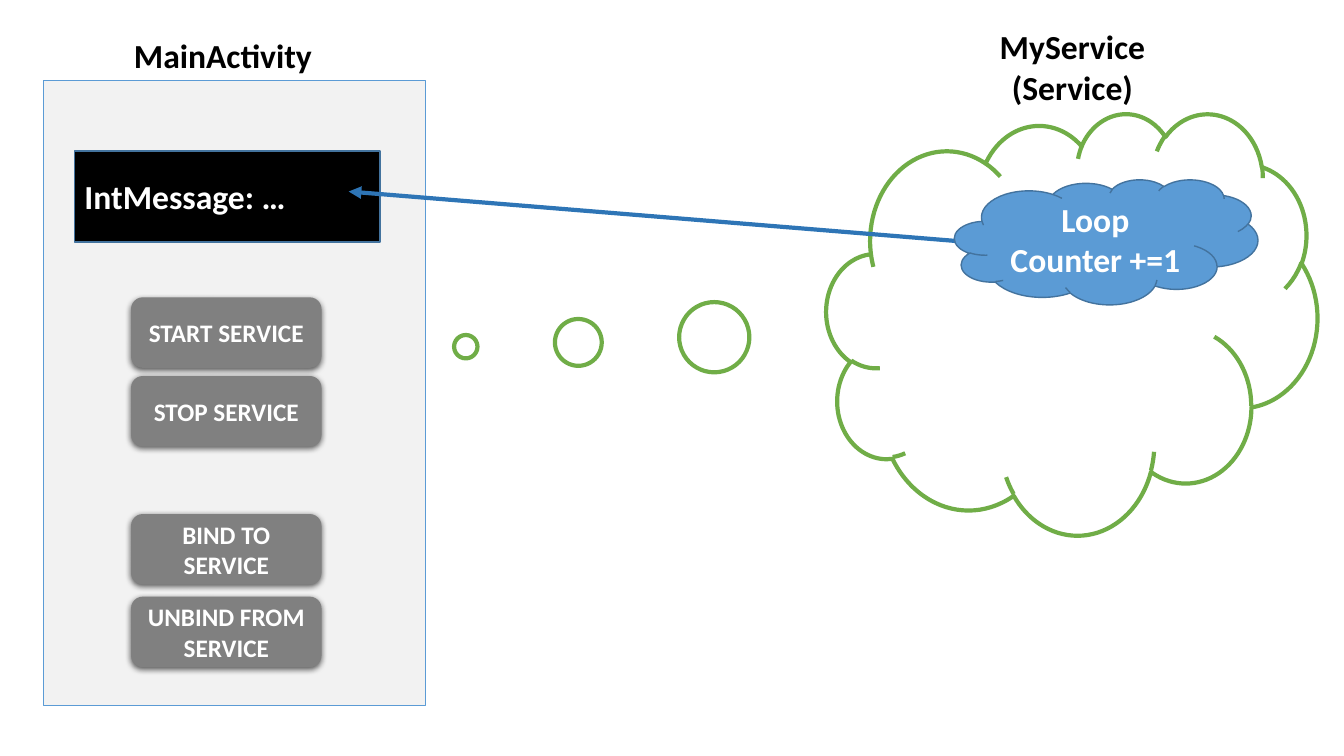
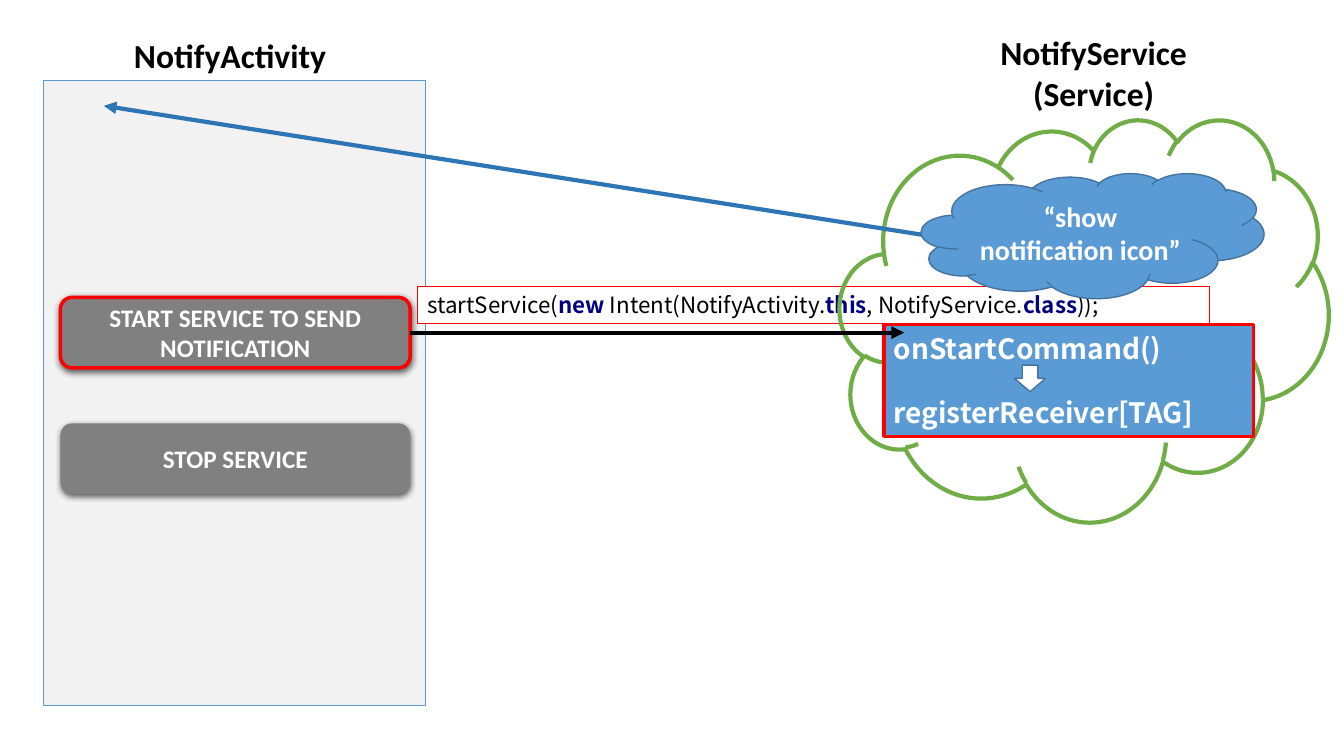
import pptx
import pptx.util
import pptx.dml.color
import pptx.enum.shapes
import pptx.enum.text
import pptx.oxml
import pptx.oxml.ns

Pt = pptx.util.Pt
RGBColor = pptx.dml.color.RGBColor
Kind = pptx.enum.shapes.MSO_SHAPE
Align = pptx.enum.text.PP_ALIGN
Anchor = pptx.enum.text.MSO_ANCHOR

WHITE = RGBColor(0xFF, 0xFF, 0xFF)
BLACK = RGBColor(0x00, 0x00, 0x00)
PALE = RGBColor(0xF2, 0xF2, 0xF2)
GRAY = RGBColor(0x80, 0x80, 0x80)
BLUE = RGBColor(0x5B, 0x9B, 0xD5)
EDGE = RGBColor(0x43, 0x73, 0x9E)
DEEP = RGBColor(0x2E, 0x75, 0xB6)
GREEN = RGBColor(0x70, 0xAD, 0x47)
RED = RGBColor(0xFF, 0x00, 0x00)
NAVY = RGBColor(0x00, 0x00, 0x80)
SANS = "Calibri"
CODE = "Noto Sans CJK SC"
PANEL = (31, 57.6, 272.8, 446.4)


def write(shape, paras, size=24, font=SANS, color=WHITE, bold=True,
          align=Align.CENTER, gap=0, wrap=True):
    """Fill a shape with paragraphs, each a string or a list of (text, color, bold)."""
    frame = shape.text_frame
    frame.word_wrap = wrap
    for i, runs in enumerate(paras):
        para = frame.paragraphs[0] if i == 0 else frame.add_paragraph()
        para.alignment = align
        para.space_before = Pt(gap if i else 0)
        for text, hue, heavy in [(runs, color, bold)] if isinstance(runs, str) else runs:
            run = para.add_run()
            run.text = text
            run.font.size, run.font.name = Pt(size), font
            run.font.bold, run.font.color.rgb = heavy, hue


def draw(slide, kind, box, fill=None, line=None, width=1):
    """Add a flat preset shape."""
    shape = slide.shapes.add_shape(kind, *map(Pt, box))
    shape.shadow.inherit = False
    shape.text_frame.vertical_anchor = Anchor.MIDDLE
    if fill is None:
        shape.fill.background()
    else:
        shape.fill.solid()
        shape.fill.fore_color.rgb = fill
    if line is None:
        shape.line.fill.background()
    else:
        shape.line.color.rgb, shape.line.width = line, Pt(width)
    return shape


def arrow(slide, start, end, color):
    """Add a straight arrow that points at its end."""
    link = slide.shapes.add_connector(
        pptx.enum.shapes.MSO_CONNECTOR.STRAIGHT, *map(Pt, start + end))
    link.line.color.rgb, link.line.width = color, Pt(3)
    tip = pptx.oxml.parse_xml(
        f'<a:tailEnd {pptx.oxml.ns.nsdecls("a")} type="triangle"/>')
    link.line._get_or_add_ln().append(tip)
    link._element.spPr.append(
        pptx.oxml.parse_xml(f'<a:effectLst {pptx.oxml.ns.nsdecls("a")}/>'))


def title(slide, box, lines, align=Align.CENTER):
    """Add a bold heading of one or more lines."""
    write(slide.shapes.add_textbox(*map(Pt, box)), lines, color=BLACK,
          align=align, wrap=False)


def button(slide, box, label, line=None):
    """Add a gray button with a soft shadow."""
    shape = draw(slide, Kind.ROUNDED_RECTANGLE, box, GRAY, line, 2.5)
    write(shape, [label], size=18)
    glow = pptx.oxml.parse_xml(
        f'<a:outerShdw {pptx.oxml.ns.nsdecls("a")} blurRad="{Pt(4.5)}" dist="{Pt(1.5)}" '
        'dir="5400000" algn="ctr" rotWithShape="0"><a:srgbClr val="000000">'
        '<a:alpha val="63000"/></a:srgbClr></a:outerShdw>')
    shape._element.spPr.find(pptx.oxml.ns.qn("a:effectLst")).append(glow)


def screen(slide, box, name, span, inset, wide, labels):
    """Draw an activity panel, its heading and its buttons at (offset, label, line)."""
    x, y, w, h = box
    draw(slide, Kind.RECTANGLE, box, PALE, BLUE, 0.5)
    title(slide, (x + 57.6, y - 36.3, span, 36), [name], Align.LEFT)
    for drop, label, line in labels:
        button(slide, (x + inset, y + drop, wide, 50.4), label, line)


def service(slide, box, name, left, span, kind, fill=None):
    """Draw a green service cloud with its heading on top."""
    x, y, w, h = box
    title(slide, (x + left, y - 65.5, span, 65.5), [name, "(Service)"])
    return draw(slide, kind, box, fill, GREEN, 3)


def cloud(slide, box, text, size):
    """Draw a blue cloud of work."""
    write(draw(slide, Kind.CLOUD, box, BLUE, EDGE), [text], size=size)


def steps(slide, box):
    """Draw the two calls inside the service, with a block arrow in the gap between."""
    x, y, w, h = box
    shape = draw(slide, Kind.RECTANGLE, box, BLUE, RED, 2.5)
    shape.text_frame.margin_top = shape.text_frame.margin_bottom = 0
    write(shape, ["onStartCommand()", "registerReceiver[TAG]"], size=20,
          font=CODE, align=Align.LEFT, gap=22)
    draw(slide, Kind.DOWN_ARROW, (x + 93.2, y + 29, 22.3, 19), WHITE, EDGE)


def bind(slide):
    """Build the slide on a bound service that counts."""
    x, y, w, h = PANEL
    screen(slide, PANEL, "MainActivity", 148.3, 62.6, 136.1, [
        (154.8, "START SERVICE", None), (211, "STOP SERVICE", None),
        (309.6, "BIND TO SERVICE", None), (368.6, "UNBIND FROM SERVICE", None)])
    bubble = service(slide, (590.4, 80.6, 350.6, 301), "MyService",
                     115.9, 119.5, Kind.CLOUD_CALLOUT, WHITE)
    bubble.adjustments[0], bubble.adjustments[1] = -1.235, 0.055
    note = draw(slide, Kind.RECTANGLE, (x + 22.3, y + 50.4, 218.2, 64.8), BLACK, EDGE)
    write(note, ["IntMessage: …"], align=Align.LEFT)
    arrow(slide, (691.2, 172.8), (249.1, 136.8), DEEP)
    cloud(slide, (681.8, 128.2, 216.7, 89.3), "Loop Counter +=1", 24)


def notify(slide):
    """Build the slide on a service that sends a notification."""
    screen(slide, PANEL, "NotifyActivity", 153.4, 12.2, 249.8, [
        (154.8, "START SERVICE TO SEND NOTIFICATION", RED),
        (244.8, "STOP SERVICE", None)])
    call = draw(slide, Kind.RECTANGLE, (298.1, 204.5, 565.9, 26.6), WHITE, RED, 0.75)
    write(call, [[("startService(", BLACK, False), ("new ", NAVY, True),
                  ("Intent(NotifyActivity.", BLACK, False), ("this", NAVY, True),
                  (", NotifyService.", BLACK, False), ("class", NAVY, True),
                  ("));", BLACK, False)]], size=16, font=CODE, align=Align.LEFT)
    service(slide, (599.8, 85, 349.2, 287.3), "NotifyService", 106.5, 149.8, Kind.CLOUD)
    steps(slide, (631.4, 231.8, 264.2, 79.9))
    arrow(slide, (691.2, 172.8), (74.2, 75.6), DEEP)
    cloud(slide, (658.1, 123.8, 244.8, 89.3), "“show notification icon”", 20)
    arrow(slide, (293, 237.6), (645.8, 237.6), BLACK)


def main():
    """Build and save the deck."""
    deck = pptx.Presentation()
    deck.slide_width, deck.slide_height = Pt(960), Pt(540)
    for build in (bind, notify):
        build(deck.slides.add_slide(deck.slide_layouts[6]))
    deck.save("out.pptx")


if __name__ == "__main__":
    main()
